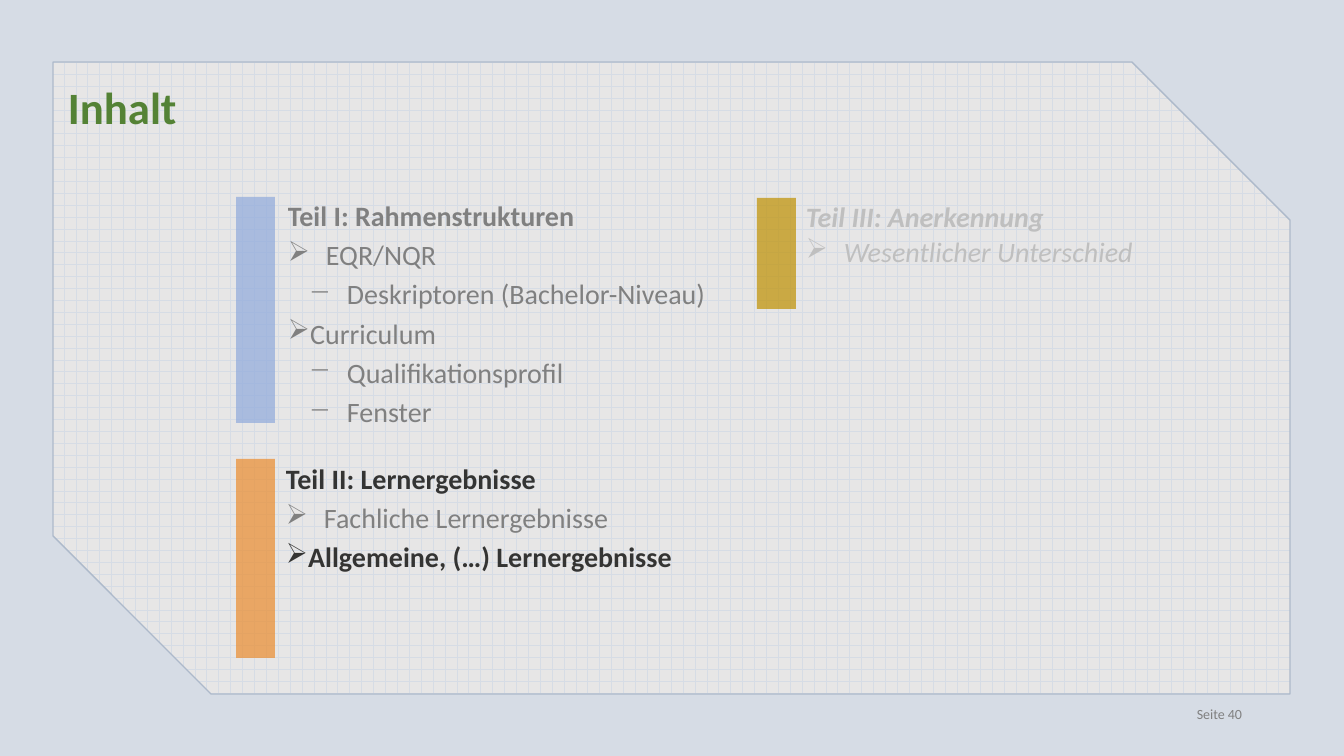
from dataclasses import dataclass

from lxml.etree import SubElement
from pptx import Presentation
from pptx.dml.color import RGBColor
from pptx.enum.dml import MSO_PATTERN
from pptx.enum.shapes import MSO_SHAPE
from pptx.enum.text import MSO_ANCHOR, PP_ALIGN
from pptx.oxml.ns import qn
from pptx.util import Emu, Pt


@dataclass(frozen=True)
class Theme:
    font: str = "Calibri"
    background: str = "D6DCE5"
    panel: str = "E7E6E6"
    outline: str = "ADB9CA"
    title: str = "548235"
    active: str = "343433"
    muted: str = "808080"
    pending: str = "BFBFBF"
    blue: str = "8FAADC"
    orange: str = "EB8B2D"
    gold: str = "BF9000"
    title_size: int = 32
    body_size: int = 20
    footer_size: int = 10


ARROW, INDENTED, DASH = ("➢", 38, 0), ("➢", 9, 0), ("−", 59, 1)
HANGING = 38


def px(length):
    return Emu(round(length * 914400 / 100.8))


def apply(target, values):
    for name, value in values.items():
        setattr(target, name, value)


class SlideBuilder:
    def __init__(self, slide, theme):
        self.slide = slide
        self.theme = theme
        fill = slide.background.fill
        fill.solid()
        fill.fore_color.rgb = RGBColor.from_string(theme.background)

    def panel(self, left, top, width, height):
        shape = self.slide.shapes.add_shape(
            MSO_SHAPE.SNIP_2_DIAG_RECTANGLE, *map(px, (left, top, width, height)))
        shape.shadow.inherit = False
        shape.adjustments[0] = 0
        shape.adjustments[1] = 0.25
        shape.fill.patterned()
        shape.fill.pattern = MSO_PATTERN.HORIZONTAL_BRICK
        shape.fill.fore_color.rgb = RGBColor.from_string(self.theme.background)
        shape.fill.back_color.rgb = RGBColor.from_string(self.theme.panel)
        shape.line.color.rgb = RGBColor.from_string(self.theme.outline)
        shape.line.width = Pt(1)

    def bar(self, left, top, height, color):
        shape = self.slide.shapes.add_shape(
            MSO_SHAPE.RECTANGLE, *map(px, (left, top, 39, height)))
        shape.shadow.inherit = False
        shape.fill.solid()
        shape.fill.fore_color.rgb = RGBColor.from_string(color)
        shape.line.fill.background()
        color_element = shape.element.spPr.find(".//" + qn("a:srgbClr"))
        SubElement(color_element, qn("a:alpha"), val="70000")

    def text_box(self, left, top, width, height, anchor=MSO_ANCHOR.TOP):
        box = self.slide.shapes.add_textbox(*map(px, (left, top, width, height)))
        apply(box.text_frame, {"word_wrap": True, "vertical_anchor": anchor})
        return box.text_frame

    def add_text(self, paragraph, text, color, size, layout, **style):
        apply(paragraph, layout)
        run = paragraph.add_run()
        run.text = text
        apply(run.font, {"name": self.theme.font, "size": Pt(size), **style})
        run.font.color.rgb = RGBColor.from_string(color)

    def line(self, text, color, size, area, layout, **style):
        frame = self.text_box(*area)
        self.add_text(frame.paragraphs[0], text, color, size, layout, **style)

    def section(self, area, heading, color, items, item_layout, italic=False):
        size = self.theme.body_size
        frame = self.text_box(*area)
        self.add_text(frame.paragraphs[0], heading, color, size,
                      {"line_spacing": 0.9, "space_before": Pt(10)},
                      bold=True, italic=italic)
        for text, (symbol, margin, level), item_color, bold in items:
            paragraph = frame.add_paragraph()
            layout = {"space_before": Pt(4), "level": level, **item_layout}
            self.add_text(paragraph, text, item_color, size, layout,
                          bold=bold, italic=italic)
            properties = paragraph._p.get_or_add_pPr()
            properties.set("marL", str(px(margin)))
            properties.set("indent", str(px(-HANGING)))
            SubElement(properties, qn("a:buChar"), char=symbol)


def main():
    theme = Theme()
    presentation = Presentation()
    apply(presentation, {"slide_width": px(1344), "slide_height": px(756)})
    slide = presentation.slides.add_slide(presentation.slide_layouts[6])
    builder = SlideBuilder(slide, theme)

    builder.panel(53, 62, 1237, 632)
    builder.line("Inhalt", theme.title, theme.title_size,
                 (58, 86, 1239, 53, MSO_ANCHOR.BOTTOM),
                 {"line_spacing": 0.9}, bold=True)

    builder.bar(236, 197, 226, theme.blue)
    builder.section((278, 197, 587, 227), "Teil I: Rahmenstrukturen", theme.muted, [
        ("EQR/NQR", ARROW, theme.muted, False),
        ("Deskriptoren (Bachelor-Niveau)", DASH, theme.muted, False),
        ("Curriculum", INDENTED, theme.muted, False),
        ("Qualifikationsprofil", DASH, theme.muted, False),
        ("Fenster", DASH, theme.muted, False),
    ], {})

    builder.bar(236, 459, 199, theme.orange)
    builder.section((276, 460, 587, 130), "Teil II: Lernergebnisse", theme.active, [
        ("Fachliche Lernergebnisse", ARROW, theme.muted, False),
        ("Allgemeine, (…) Lernergebnisse", INDENTED, theme.active, True),
    ], {})

    builder.bar(757, 198, 111, theme.gold)
    builder.section((796, 198, 516, 110), "Teil III: Anerkennung", theme.pending, [
        ("Wesentlicher Unterschied", ARROW, theme.pending, False),
    ], {"line_spacing": 0.9}, italic=True)

    builder.line("Seite 40", theme.muted, theme.footer_size,
                 (950, 701, 302, 40), {"alignment": PP_ALIGN.RIGHT})
    presentation.save("out.pptx")


if __name__ == "__main__":
    main()
